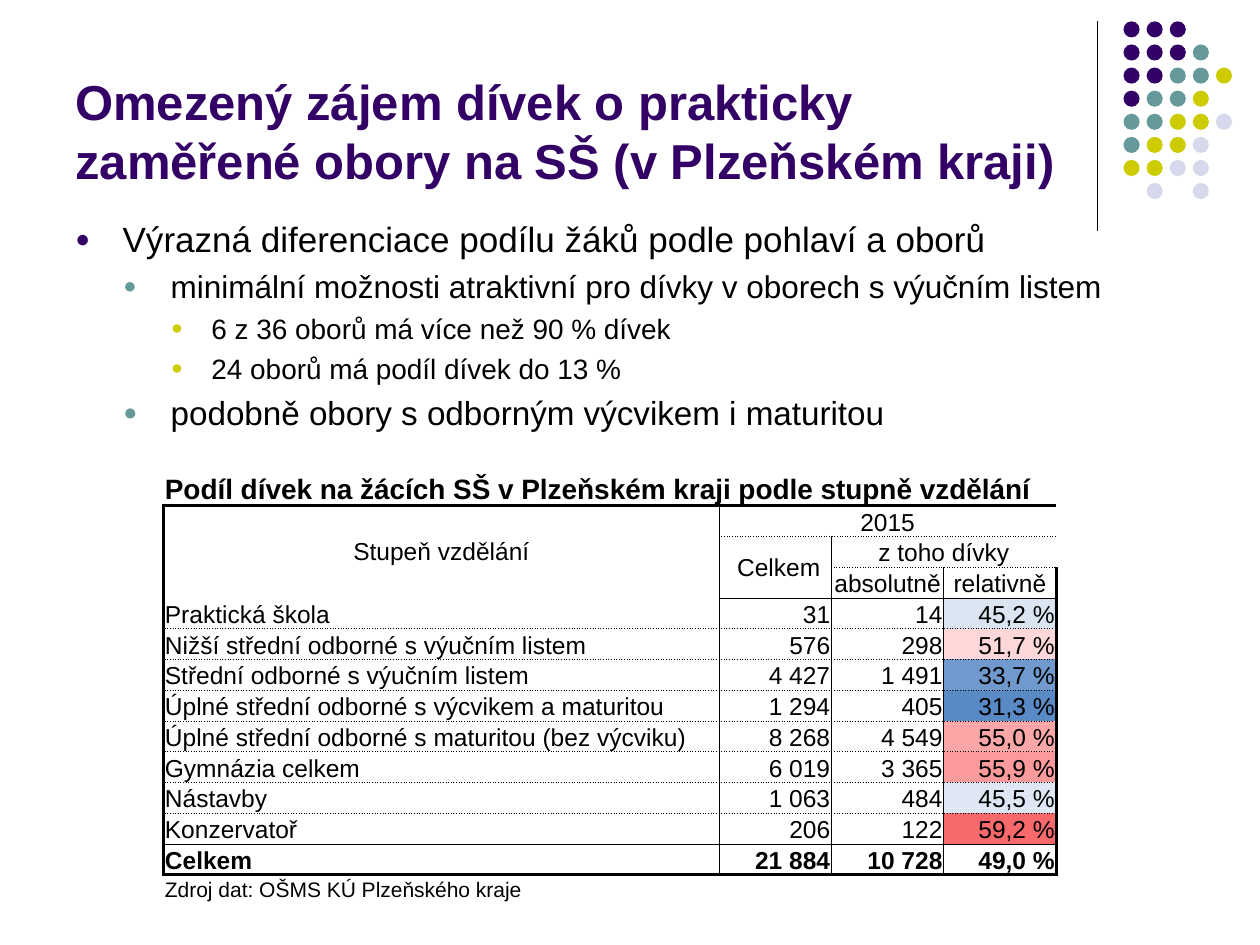
from lxml.etree import SubElement
from pptx import Presentation
from pptx.dml.color import RGBColor
from pptx.enum.shapes import MSO_CONNECTOR as Connector, MSO_SHAPE as Shape
from pptx.enum.text import MSO_ANCHOR as Anchor, PP_ALIGN as Align
from pptx.oxml.ns import qn
from pptx.util import Pt

PURPLE, TEAL, OLIVE, LILAC = "330066", "669999", "CCCC00", "D8D8EC"
BLACK = "000000"

# One letter per dot; a blank leaves a gap in the grid
DOT_COLORS = {"P": PURPLE, "T": TEAL, "O": OLIVE, "L": LILAC}
DOT_ROWS = ["PPP", "PPPT", "PPTTO", "PTTO", "TTOOL", "TOOL", "OOLL", " L L"]

# Level: left margin, hanging indent, bullet colour
LEVELS = [(27, 27, PURPLE), (54.5, 27, TEAL), (77.75, 23, OLIVE)]
BULLETS = [
    (0, 20, "Výrazná diferenciace podílu žáků podle pohlaví a oborů"),
    (1, 18, "minimální možnosti atraktivní pro dívky v oborech s výučním listem"),
    (2, 16, "6 z 36 oborů má více než 90 % dívek"),
    (2, 16, "24 oborů má podíl dívek do 13 %"),
    (1, 19, "podobně obory s odborným výcvikem i maturitou"),
]

TABLE_ROWS = [
    ["Podíl dívek na žácích SŠ v Plzeňském kraji podle stupně vzdělání", "", "", ""],
    ["Stupeň vzdělání", "2015", "", ""],
    ["", " Celkem", "z toho dívky", ""],
    ["", "", "absolutně", "relativně"],
    ["Praktická škola", "31", "14", "45,2 %"],
    ["Nižší střední odborné s výučním listem", "576", "298", "51,7 %"],
    ["Střední odborné s výučním listem", "4 427", "1 491", "33,7 %"],
    ["Úplné střední odborné s výcvikem a maturitou", "1 294", "405", "31,3 %"],
    ["Úplné střední odborné s maturitou (bez výcviku)", "8 268", "4 549", "55,0 %"],
    ["Gymnázia celkem", "6 019", "3 365", "55,9 %"],
    ["Nástavby", "1 063", "484", "45,5 %"],
    ["Konzervatoř", "206", "122", "59,2 %"],
    ["Celkem", "21 884", "10 728", "49,0 %"],
    ["Zdroj dat: OŠMS KÚ Plzeňského kraje", "", "", ""],
]
SHARE_FILLS = ["DBE5F2", "FED8D8", "7099CD", "5A8AC6", "FBA7A8", "FB9A9C",
               "DEE7F3", "F8696B", "FFFFFF"]
HEADER_ROW, DATA_ROW, TOTAL_ROW, SOURCE_ROW = 1, 4, 12, 13
# First row, first column, last row, last column
MERGES = [(0, 0, 0, 3), (1, 0, 3, 0), (1, 1, 1, 3), (2, 1, 3, 1),
          (2, 2, 2, 3), (13, 0, 13, 3)]


def color(value):
    return RGBColor.from_string(value)


def apply(target, values):
    for name, value in values.items():
        setattr(target, name, value)


def merge_box(row, column):
    for box in MERGES:
        if box[0] <= row <= box[2] and box[1] <= column <= box[3]:
            return box
    return row, column, row, column


def horizontal_edge(edge):
    """Width and dash of the rule above table row number edge."""
    if edge in (0, len(TABLE_ROWS)):
        return None
    if edge in (HEADER_ROW, SOURCE_ROW):
        return 2, "solid"
    return 0.5, "solid" if edge in (DATA_ROW, TOTAL_ROW) else "sysDot"


def vertical_edge(edge, row):
    if row in (0, SOURCE_ROW):
        return None
    return (2 if edge in (0, 4) else 0.5), "solid"


def cell_edges(row, column):
    top, left, bottom, right = merge_box(row, column)
    return {
        "lnL": vertical_edge(column, row) if column == left else None,
        "lnR": vertical_edge(column + 1, row) if column == right else None,
        "lnT": horizontal_edge(row) if row == top else None,
        "lnB": horizontal_edge(row + 1) if row == bottom else None,
    }


def cell_style(row, column):
    """Size, bold and alignment by the place in the table."""
    size = {0: 16, SOURCE_ROW: 12}.get(row, 14)
    if HEADER_ROW <= row < DATA_ROW:
        align = Align.CENTER
    else:
        align = Align.RIGHT if column else Align.LEFT
    return size, row in (0, TOTAL_ROW), align


class SlideBuilder:
    font = "Arial"

    def __init__(self, slide):
        self.slide = slide

    def add_text(self, paragraph, text, size, ink=BLACK, bold=False):
        run = paragraph.add_run()
        run.text = text
        apply(run.font, {"name": self.font, "size": Pt(size), "bold": bold})
        run.font.color.rgb = color(ink)

    def text_frame(self, left, top, width, height, anchor):
        box = self.slide.shapes.add_textbox(Pt(left), Pt(top), Pt(width), Pt(height))
        apply(box.text_frame, {"word_wrap": True, "vertical_anchor": anchor})
        return box.text_frame

    def title(self, text, *place):
        frame = self.text_frame(*place, Anchor.BOTTOM)
        self.add_text(frame.paragraphs[0], text, 28, PURPLE, True)

    def bullets(self, items, *place):
        frame = self.text_frame(*place, Anchor.TOP)
        for index, (level, size, text) in enumerate(items):
            paragraph = frame.add_paragraph() if index else frame.paragraphs[0]
            apply(paragraph, {"level": level, "space_before": Pt(size * 0.23)})
            margin, hanging, ink = LEVELS[level]
            properties = paragraph._p.get_or_add_pPr()
            properties.set("marL", str(Pt(margin)))
            properties.set("indent", str(-Pt(hanging)))
            bullet_color = SubElement(properties, qn("a:buClr"))
            SubElement(bullet_color, qn("a:srgbClr"), val=ink)
            SubElement(properties, qn("a:buSzPct"), val="70000")
            SubElement(properties, qn("a:buFont"), typeface=self.font)
            SubElement(properties, qn("a:buChar"), char="●")
            self.add_text(paragraph, text, size)

    def line(self, x1, y1, x2, y2):
        connector = self.slide.shapes.add_connector(
            Connector.STRAIGHT, Pt(x1), Pt(y1), Pt(x2), Pt(y2))
        connector.line.color.rgb = color(BLACK)
        connector.line.width = Pt(0.75)
        SubElement(connector._element.spPr, qn("a:effectLst"))

    def dots(self, rows, left, top, step, size):
        group = self.slide.shapes.add_group_shape()
        for row, letters in enumerate(rows):
            for column, letter in enumerate(letters):
                if letter == " ":
                    continue
                dot = group.shapes.add_shape(
                    Shape.OVAL, Pt(left + column * step), Pt(top + row * step),
                    Pt(size), Pt(size))
                dot.shadow.inherit = False
                dot.fill.solid()
                dot.fill.fore_color.rgb = color(DOT_COLORS[letter])
                dot.line.fill.background()

    def border(self, cell, side, edge):
        line = SubElement(cell._tc.get_or_add_tcPr(), qn("a:" + side))
        if edge is None:
            SubElement(line, qn("a:noFill"))
            return
        width, dash = edge
        line.set("w", str(Pt(width)))
        fill = SubElement(line, qn("a:solidFill"))
        SubElement(fill, qn("a:srgbClr"), val=BLACK)
        SubElement(line, qn("a:prstDash"), val=dash)

    def table(self, rows, left, top, widths, heights):
        table = self.slide.shapes.add_table(
            len(rows), len(widths), Pt(left), Pt(top),
            Pt(sum(widths)), Pt(sum(heights))).table
        apply(table, {"first_row": False, "horz_banding": False})
        for column, width in zip(table.columns, widths):
            column.width = Pt(width)
        for row, height in zip(table.rows, heights):
            row.height = Pt(height)
        for first_row, first_column, last_row, last_column in MERGES:
            table.cell(first_row, first_column).merge(
                table.cell(last_row, last_column))
        for row, texts in enumerate(rows):
            for column, text in enumerate(texts):
                self.cell(table.cell(row, column), row, column, text)

    def cell(self, cell, row, column, text):
        top, _, bottom, _ = merge_box(row, column)
        apply(cell, {
            "margin_left": Pt(0.75), "margin_right": Pt(0.75),
            "margin_top": Pt(0.75), "margin_bottom": 0,
            "vertical_anchor": Anchor.MIDDLE if bottom > top else Anchor.BOTTOM})
        for side, edge in cell_edges(row, column).items():
            self.border(cell, side, edge)
        if column == 3 and DATA_ROW <= row <= TOTAL_ROW:
            cell.fill.solid()
            cell.fill.fore_color.rgb = color(SHARE_FILLS[row - DATA_ROW])
        else:
            cell.fill.background()
        size, bold, align = cell_style(row, column)
        paragraph = cell.text_frame.paragraphs[0]
        paragraph.alignment = align
        paragraph.font.size = Pt(size)
        if text:
            self.add_text(paragraph, text, size, bold=bold)


def main():
    presentation = Presentation()
    apply(presentation, {"slide_width": Pt(720), "slide_height": Pt(540)})
    builder = SlideBuilder(presentation.slides.add_slide(presentation.slide_layouts[6]))

    # Corner decoration
    builder.line(627, 12, 627, 132)
    builder.dots(DOT_ROWS, 642, 12.2, 13.2, 9.2)

    # Title and bullets
    builder.title("Omezený zájem dívek o prakticky zaměřené obory na SŠ (v Plzeňském kraji)",
                  36, 9.5, 594, 102)
    builder.bullets(BULLETS, 36, 121, 631.5, 137)

    # Table with its heading and source rows
    builder.table(TABLE_ROWS, 93.5, 268.75, [317.5, 64.2, 64.2, 64.2],
                  [20.2] + [16.5] * 3 + [17.6] * 9 + [15.4])
    presentation.save("out.pptx")


if __name__ == "__main__":
    main()
